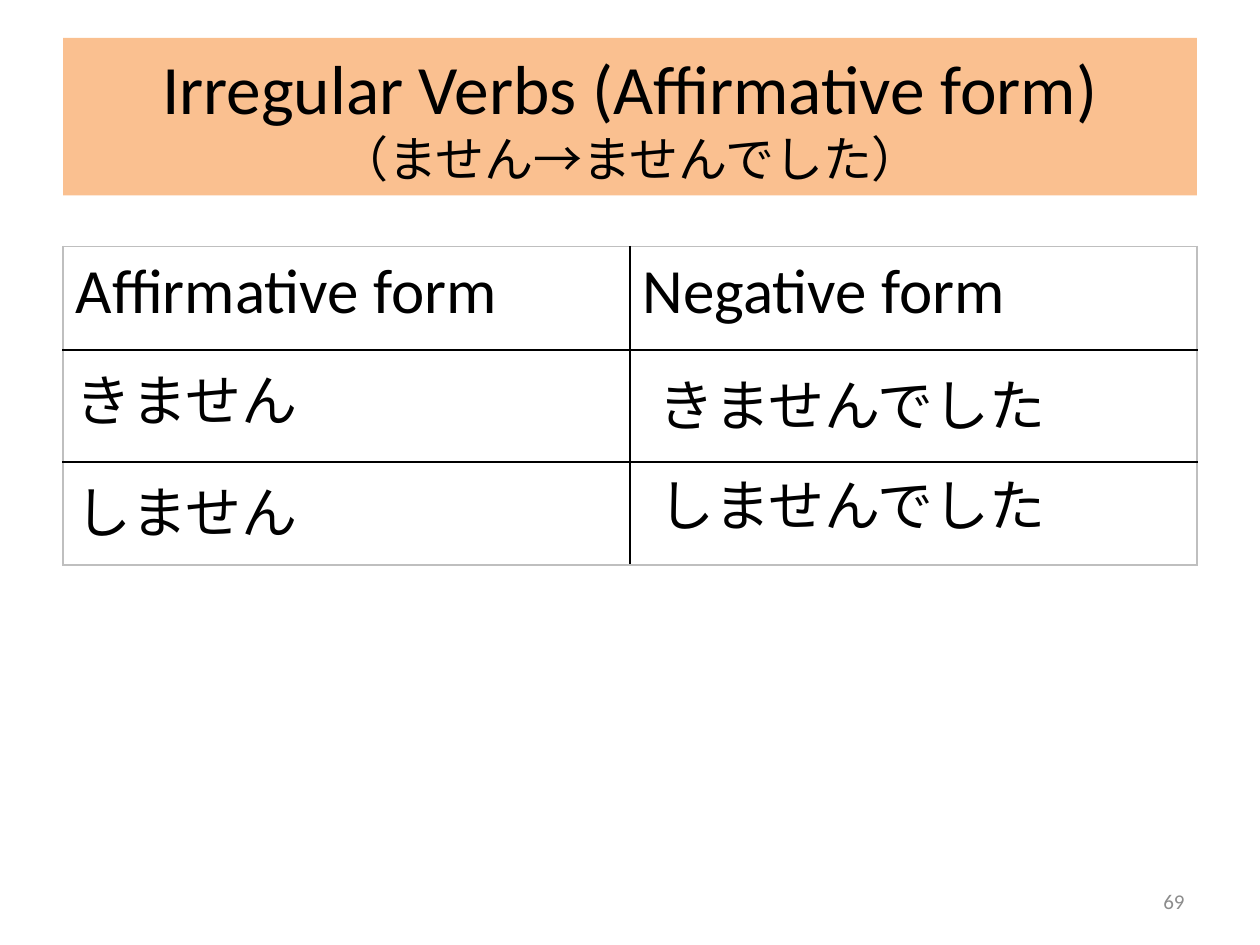
"""Build a slide on irregular Japanese verbs in the past negative."""
from typing import NamedTuple

from lxml.etree import SubElement
from pptx import Presentation
from pptx.dml.color import RGBColor
from pptx.enum.text import MSO_ANCHOR, MSO_AUTO_SIZE, PP_ALIGN
from pptx.oxml.ns import qn
from pptx.util import Pt

BLACK = RGBColor(0x00, 0x00, 0x00)
GREY = RGBColor(0x8C, 0x8C, 0x8C)
EDGE_GREY = RGBColor(0xBF, 0xBF, 0xBF)
PEACH = RGBColor(0xFA, 0xC0, 0x90)
LATIN = "Calibri"
JAPANESE = "Noto Sans CJK JP"

HEADINGS = ("Affirmative form", "Negative form")
VERBS = ("きません", "しません")
ROW_HEIGHTS = (59, 64, 59)


class Label(NamedTuple):
    text: str
    left: float
    top: float
    width: float
    height: float
    size: float
    font: str = JAPANESE
    color: RGBColor = BLACK
    align: PP_ALIGN = PP_ALIGN.LEFT
    anchor: MSO_ANCHOR = MSO_ANCHOR.TOP


LABELS = (
    Label("69", 516, 500.5, 168, 28.75, 12, LATIN, GREY, PP_ALIGN.RIGHT, MSO_ANCHOR.MIDDLE),
    Label("きませんでした", 369, 208, 315, 46, 32),
    Label("しませんでした", 369, 265.5, 315, 46, 32),
)


def style_paragraph(para, size: float, font: str, color: RGBColor = BLACK) -> None:
    """Set size, colour and both Latin and East Asian typefaces."""
    para.font.size = Pt(size)
    para.font.color.rgb = color
    para.font.name = font
    defaults = para.font._element
    SubElement(defaults, qn("a:ea"), typeface=JAPANESE)


def add_title(slide) -> None:
    """Fill the title placeholder with its two lines."""
    title = slide.shapes.title
    title.left, title.top, title.width, title.height = Pt(36), Pt(21.6), Pt(648), Pt(90)
    title.fill.solid()
    title.fill.fore_color.rgb = PEACH
    frame = title.text_frame
    frame.auto_size = MSO_AUTO_SIZE.NONE
    frame.vertical_anchor = MSO_ANCHOR.MIDDLE
    para = frame.paragraphs[0]
    para.alignment = PP_ALIGN.CENTER
    style_paragraph(para, 39.6, LATIN)
    para.add_run().text = "Irregular Verbs (Affirmative form)"
    para.add_line_break()
    subtitle = para.add_run()
    subtitle.text = "（ません→ませんでした）"
    subtitle.font.size = Pt(28)


def add_label(slide, label: Label) -> None:
    """Add one wrapped text box."""
    box = slide.shapes.add_textbox(
        Pt(label.left), Pt(label.top), Pt(label.width), Pt(label.height)
    )
    frame = box.text_frame
    frame.word_wrap = True
    frame.vertical_anchor = label.anchor
    para = frame.paragraphs[0]
    para.text = label.text
    para.alignment = label.align
    style_paragraph(para, label.size, label.font, label.color)


def set_borders(cell, outer_sides: dict[str, bool]) -> None:
    """Draw grey outer and black inner cell borders."""
    properties = cell._tc.get_or_add_tcPr()
    for position, (side, is_outer) in enumerate(outer_sides.items()):
        line = SubElement(properties, qn(f"a:ln{side}"), w=str(Pt(1)))
        fill = SubElement(line, qn("a:solidFill"))
        SubElement(fill, qn("a:srgbClr"), val=str(EDGE_GREY if is_outer else BLACK))
        properties.insert(position, line)


def add_verb_table(slide) -> None:
    """Add the table of verb forms."""
    rows, columns = len(ROW_HEIGHTS), len(HEADINGS)
    table = slide.shapes.add_table(
        rows, columns, Pt(36), Pt(141), Pt(648), Pt(sum(ROW_HEIGHTS))
    ).table
    table.first_row = table.horz_banding = False
    for row, height in enumerate(ROW_HEIGHTS):
        table.rows[row].height = Pt(height)
        for column in range(columns):
            cell = table.cell(row, column)
            cell.fill.background()
            set_borders(cell, {
                "L": column == 0,
                "R": column == columns - 1,
                "T": row == 0,
                "B": row == rows - 1,
            })
            para = cell.text_frame.paragraphs[0]
            if row == 0:
                para.text = HEADINGS[column]
                style_paragraph(para, 36, LATIN)
            elif column == 0:
                para.text = VERBS[row - 1]
                style_paragraph(para, 32, JAPANESE)


def main() -> None:
    """Create and save the deck."""
    deck = Presentation()
    deck.slide_width, deck.slide_height = Pt(720), Pt(540)
    slide = deck.slides.add_slide(deck.slide_layouts[5])
    add_title(slide)
    add_verb_table(slide)
    for label in LABELS:
        add_label(slide, label)
    deck.save("out.pptx")


if __name__ == "__main__":
    main()
